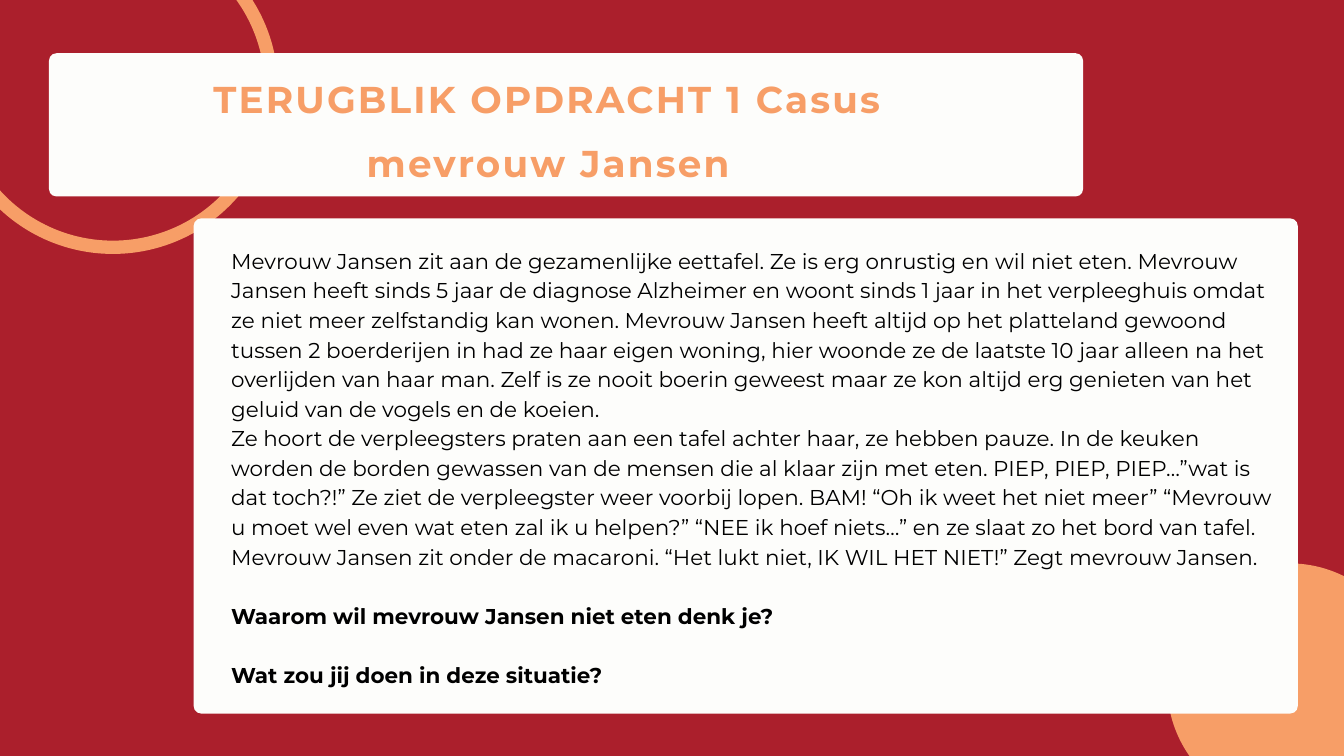
from dataclasses import dataclass

from pptx import Presentation
from pptx.dml.color import RGBColor
from pptx.enum.shapes import MSO_SHAPE
from pptx.enum.text import PP_ALIGN
from pptx.util import Pt


@dataclass(frozen=True)
class Theme:
    """Colours, font and type sizes of the slide."""
    red: RGBColor = RGBColor(0xAB, 0x1F, 0x2C)
    orange: RGBColor = RGBColor(0xF7, 0x9E, 0x67)
    paper: RGBColor = RGBColor(0xFD, 0xFD, 0xFB)
    black: RGBColor = RGBColor(0, 0, 0)
    font: str = "Montserrat"
    title_size: float = 40
    title_leading: float = 68
    title_tracking: float = 2.4
    body_size: float = 23
    body_leading: float = 31.7
    ring_width: float = 14.25
    corner: float = 8


THEME = Theme()

TITLE = "TERUGBLIK OPDRACHT 1 Casus mevrouw Jansen"
STORY = (
    "Mevrouw Jansen zit aan de gezamenlijke eettafel. Ze is erg onrustig en wil niet eten. "
    "Mevrouw Jansen heeft sinds 5 jaar de diagnose Alzheimer en woont sinds 1 jaar in het "
    "verpleeghuis omdat ze niet meer zelfstandig kan wonen. Mevrouw Jansen heeft altijd op het "
    "platteland gewoond tussen 2 boerderijen in had ze haar eigen woning, hier woonde ze de "
    "laatste 10 jaar alleen na het overlijden van haar man. Zelf is ze nooit boerin geweest maar "
    "ze kon altijd erg genieten van het geluid van de vogels en de koeien.",
    "Ze hoort de verpleegsters praten aan een tafel achter haar, ze hebben pauze. In de keuken "
    "worden de borden gewassen van de mensen die al klaar zijn met eten. PIEP, PIEP, PIEP…”wat is "
    "dat toch?!” Ze ziet de verpleegster weer voorbij lopen. BAM! “Oh ik weet het niet meer” "
    "“Mevrouw u moet wel even wat eten zal ik u helpen?” “NEE ik hoef niets…” en ze slaat zo het "
    "bord van tafel. Mevrouw Jansen zit onder de macaroni. “Het lukt niet, IK WIL HET NIET!” Zegt "
    "mevrouw Jansen.",
)
QUESTIONS = (
    "Waarom wil mevrouw Jansen niet eten denk je?",
    "Wat zou jij doen in deze situatie?",
)


def add_circle(slide, left, top, diameter):
    """Add an orange disc and return it."""
    circle = slide.shapes.add_shape(
        MSO_SHAPE.OVAL, Pt(left), Pt(top), Pt(diameter), Pt(diameter))
    circle.shadow.inherit = False
    circle.fill.solid()
    circle.fill.fore_color.rgb = THEME.orange
    circle.line.fill.background()
    return circle


def add_ring(slide, left, top, diameter):
    """Add an open orange ring."""
    ring = add_circle(slide, left, top, diameter)
    ring.fill.background()
    ring.line.color.rgb = THEME.orange
    ring.line.width = Pt(THEME.ring_width)


def add_panel(slide, left, top, width, height):
    """Add a paper-coloured panel with rounded corners."""
    panel = slide.shapes.add_shape(
        MSO_SHAPE.ROUNDED_RECTANGLE, Pt(left), Pt(top), Pt(width), Pt(height))
    panel.adjustments[0] = THEME.corner / min(width, height)
    panel.shadow.inherit = False
    panel.fill.solid()
    panel.fill.fore_color.rgb = THEME.paper
    panel.line.fill.background()


def add_text_frame(slide, left, top, width, height):
    """Add a wrapping text box without margins and return its frame."""
    frame = slide.shapes.add_textbox(Pt(left), Pt(top), Pt(width), Pt(height)).text_frame
    frame.word_wrap = True
    frame.margin_left = frame.margin_right = frame.margin_top = frame.margin_bottom = 0
    return frame


def style_paragraph(paragraph, size, leading, color, bold):
    """Set the font and line spacing of a paragraph."""
    paragraph.line_spacing = Pt(leading)
    paragraph.font.name = THEME.font
    paragraph.font.size = Pt(size)
    paragraph.font.bold = bold
    paragraph.font.color.rgb = color


def add_title(slide, left, top, width, height):
    """Add the centred, letterspaced title."""
    title = add_text_frame(slide, left, top, width, height).paragraphs[0]
    title.alignment = PP_ALIGN.CENTER
    style_paragraph(title, THEME.title_size, THEME.title_leading, THEME.orange, True)
    run = title.add_run()
    run.text = TITLE
    run.font._element.set("spc", str(round(THEME.title_tracking * 100)))


def add_case(slide, left, top, width, height):
    """Add the case story followed by its bold questions."""
    frame = add_text_frame(slide, left, top, width, height)
    for index, text in enumerate(STORY + QUESTIONS):
        is_question = text in QUESTIONS
        paragraph = frame.add_paragraph() if index else frame.paragraphs[0]
        paragraph.text = text
        if is_question:
            paragraph.space_before = Pt(THEME.body_leading)
        style_paragraph(
            paragraph, THEME.body_size, THEME.body_leading, THEME.black, is_question)


def main():
    """Build the case slide and save it."""
    presentation = Presentation()
    presentation.slide_width, presentation.slide_height = Pt(1440), Pt(810)
    slide = presentation.slides.add_slide(presentation.slide_layouts[6])
    slide.background.fill.solid()
    slide.background.fill.fore_color.rgb = THEME.red

    add_ring(slide, -49, -75, 340)
    add_circle(slide, 1250.6, 603.6, 262)
    add_panel(slide, 207.5, 234, 1183, 530.5)
    add_panel(slide, 52.5, 57, 1108, 153.5)
    add_title(slide, 119.5, 62, 936, 129.5)
    add_case(slide, 247.7, 261.4, 1128.2, 502.5)
    presentation.save("out.pptx")


if __name__ == "__main__":
    main()
